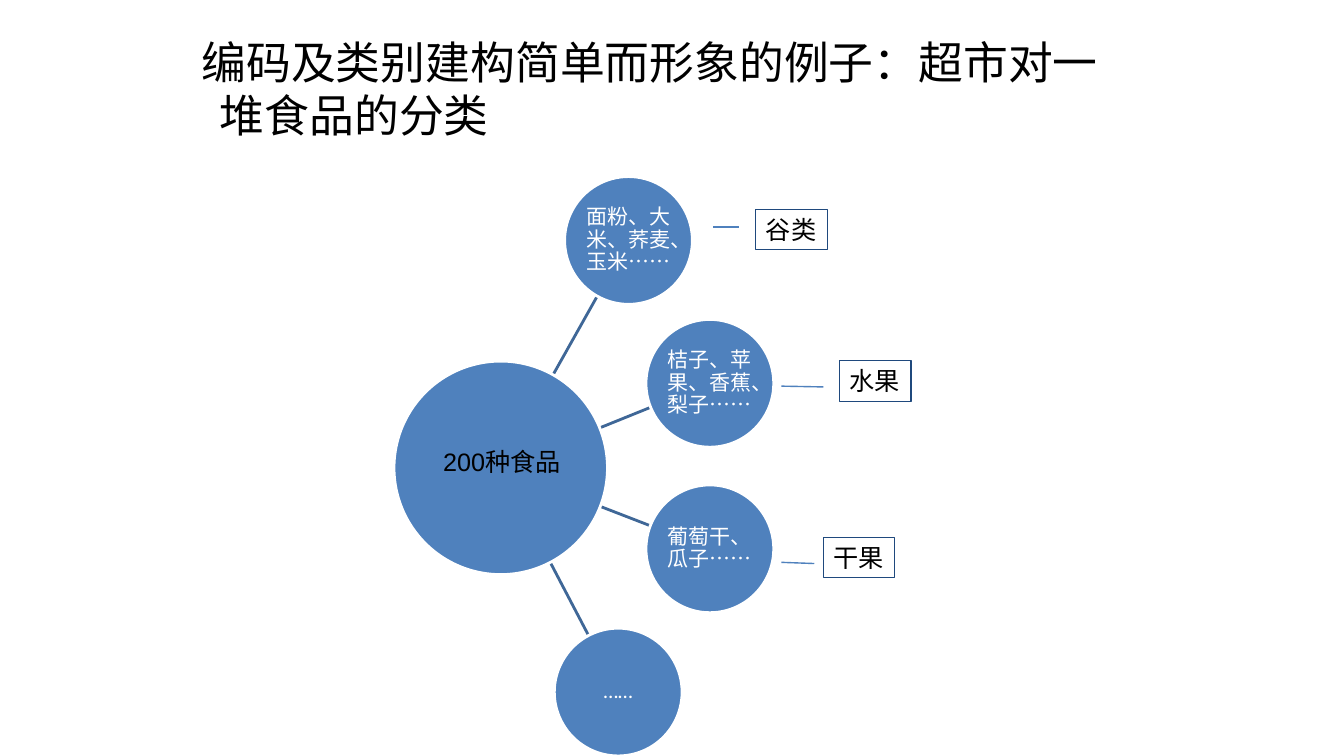
from dataclasses import dataclass
from math import hypot

from lxml.etree import SubElement
from pptx import Presentation
from pptx.dml.color import RGBColor as RGB
from pptx.enum.shapes import MSO_CONNECTOR as Connector, MSO_SHAPE as Shape
from pptx.enum.text import MSO_ANCHOR as Anchor, MSO_AUTO_SIZE as AutoSize, PP_ALIGN as Align
from pptx.oxml.ns import qn
from pptx.util import Cm, Pt


@dataclass(frozen=True)
class Theme:
    black: RGB = RGB(0x00, 0x00, 0x00)
    white: RGB = RGB(0xFF, 0xFF, 0xFF)
    blue: RGB = RGB(0x4F, 0x81, 0xBD)
    spoke: RGB = RGB(0x3F, 0x67, 0x97)
    navy: RGB = RGB(0x1F, 0x49, 0x7D)
    heading_font: str = "Calibri"
    label_font: str = "Arial"
    title_size: Pt = Pt(32)
    label_size: Pt = Pt(18)
    node_size: Pt = Pt(15)


def apply_formats(target, formats):
    for name, value in formats.items():
        setattr(target, name, value)


class FoodMap:
    """Draws on one slide; every length is given in centimetres."""

    def __init__(self, slide, theme):
        self.shapes, self.theme = slide.shapes, theme

    def add_words(self, frame, text, font, size, color, frame_format, paragraph_format):
        apply_formats(frame, frame_format)
        paragraph = frame.paragraphs[0]
        apply_formats(paragraph, paragraph_format)
        run = paragraph.add_run()
        run.text = text
        apply_formats(run.font, {"name": font, "size": size})
        run.font.color.rgb = color

    def title(self, text, left, top, width, height):
        box = self.shapes.add_textbox(Cm(left), Cm(top), Cm(width), Cm(height))
        theme = self.theme
        self.add_words(box.text_frame, text, theme.heading_font, theme.title_size, theme.black,
                       {"word_wrap": True}, {"alignment": Align.LEFT})
        properties = box.text_frame.paragraphs[0]._p.get_or_add_pPr()
        properties.set("marL", str(Cm(0.97)))
        properties.set("indent", str(Cm(-0.46)))

    def line(self, start, end, color, width):
        line = self.shapes.add_connector(Connector.STRAIGHT, *map(Cm, (*start, *end)))
        line.line.color.rgb = color
        line.line.width = Pt(width)
        SubElement(line._element.spPr, qn("a:effectLst"))

    def spoke(self, hub, node, hub_reach, node_radius):
        """Runs from inside the hub towards the node's centre, up to its rim."""
        dx, dy = node[0] - hub[0], node[1] - hub[1]
        distance = hypot(dx, dy)
        ends = [(hub[0] + dx * reach / distance, hub[1] + dy * reach / distance)
                for reach in (hub_reach, distance - node_radius)]
        self.line(*ends, self.theme.spoke, 2)

    def outline(self, kind, left, top, width, height, fill, color, line_width):
        shape = self.shapes.add_shape(kind, *map(Cm, (left, top, width, height)))
        shape.shadow.inherit = False
        if fill is None:
            shape.fill.background()
        else:
            shape.fill.solid()
            shape.fill.fore_color.rgb = fill
        shape.line.color.rgb = color
        shape.line.width = Pt(line_width)
        return shape

    def circle(self, center, radius, text=None):
        theme = self.theme
        disc = self.outline(Shape.OVAL, center[0] - radius, center[1] - radius,
                            2 * radius, 2 * radius, theme.blue, theme.white, 2)
        if text:
            margins = {f"margin_{side}": Cm(0.03) for side in ("left", "top", "right", "bottom")}
            self.add_words(disc.text_frame, text, theme.heading_font, theme.node_size, theme.white,
                           {"word_wrap": True, "vertical_anchor": Anchor.MIDDLE, **margins},
                           {"alignment": Align.CENTER, "line_spacing": 0.9})

    def label(self, text, left, top, width, border, wrap=False):
        theme = self.theme
        box = self.outline(Shape.RECTANGLE, left, top, width, 1.02, None, border, 0.75)
        self.add_words(box.text_frame, text, theme.label_font, theme.label_size, theme.black,
                       {"word_wrap": wrap, "vertical_anchor": Anchor.TOP,
                        "auto_size": AutoSize.SHAPE_TO_FIT_TEXT},
                       {"alignment": Align.LEFT})


HUB, HUB_RADIUS, HUB_REACH = (12.62, 11.79), 2.69, 2.14
NODE_RADIUS = 1.61
FOODS = [
    ((15.84, 6.06), "面粉、大米、荞麦、玉米……"),
    ((17.89, 9.66), "桔子、苹果、香蕉、梨子……"),
    ((17.89, 13.83), "葡萄干、瓜子……"),
    ((15.58, 17.44), "……"),
]
# category, left and top of its box, start and end of its dash
CATEGORIES = [
    ("谷类", (19.05, 5.28), (17.98, 5.72), (18.62, 5.72)),
    ("水果", (21.16, 9.09), (19.69, 9.73), (20.75, 9.75)),
    ("干果", (20.75, 13.54), (19.69, 14.17), (20.52, 14.2)),
]


def main():
    deck = Presentation()
    apply_formats(deck, {"slide_width": Cm(33.87), "slide_height": Cm(19.05)})
    theme = Theme()
    food_map = FoodMap(deck.slides.add_slide(deck.slide_layouts[6]), theme)

    food_map.title("编码及类别建构简单而形象的例子：超市对一堆食品的分类", 4.32, 0.74, 24.13, 3)
    for center, _ in FOODS:
        food_map.spoke(HUB, center, HUB_REACH, NODE_RADIUS)
    food_map.circle(HUB, HUB_RADIUS)
    for center, foods in FOODS:
        food_map.circle(center, NODE_RADIUS, foods)
    for category, corner, start, end in CATEGORIES:
        food_map.line(start, end, theme.blue, 1)
        food_map.label(category, *corner, 1.8, theme.navy)
    food_map.label("200种食品", 10.92, 11.13, 3.58, theme.blue, wrap=True)

    deck.save("out.pptx")


if __name__ == "__main__":
    main()
